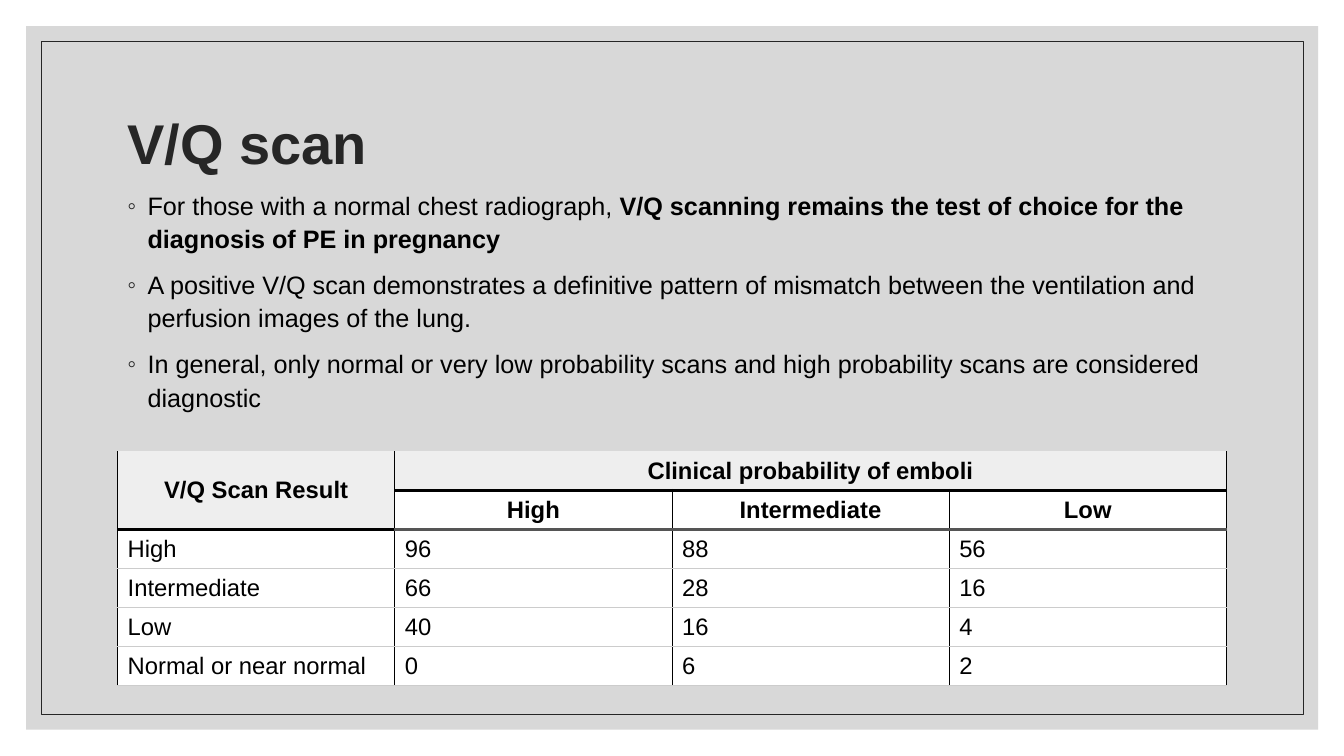
from lxml import etree
from pptx import Presentation
from pptx.dml.color import RGBColor
from pptx.enum import shapes, text
from pptx.oxml.ns import qn
from pptx.util import Pt

INK, BLACK, WHITE = "262626", "000000", "FFFFFF"
HEADER, GRID, RULE = "EEEEEE", "CCCCCC", "555555"
LEFT, WIDTH = 84, 792


def add_run(p, words, size, color=BLACK, bold=False):
    r = p.add_run()
    r.text = words
    for name, value in {"name": "Arial", "size": Pt(size), "bold": bold}.items():
        setattr(r.font, name, value)
    r.font.color.rgb = RGBColor.from_string(color)


def set_border(cell, position, side, color, width):
    """Draw one cell edge; position keeps the edges in schema order before the fill."""
    ln = etree.Element(qn(f"a:ln{side}"), w=str(Pt(width)))
    fill = etree.SubElement(ln, qn("a:solidFill"))
    etree.SubElement(fill, qn("a:srgbClr"), val=color)
    cell._tc.get_or_add_tcPr().insert(position, ln)


prs = Presentation()
prs.slide_width, prs.slide_height = Pt(960), Pt(540)
s = prs.slides.add_slide(prs.slide_layouts[5])
title = s.shapes.title

# Frame behind the content
panel, outline = [
    s.shapes.add_shape(shapes.MSO_SHAPE.RECTANGLE, *map(Pt, box))
    for box in ((18.6, 18.6, 923, 502.6), (29.4, 29.4, 901.5, 481))
]
panel.fill.solid()
panel.fill.fore_color.rgb = RGBColor.from_string("BFBFBF")
panel_color = panel.fill._xPr.find(".//" + qn("a:srgbClr"))
etree.SubElement(panel_color, qn("a:alpha"), val="60000")
panel.line.fill.background()
outline.fill.background()
outline.line.color.rgb = RGBColor.from_string(INK)
outline.line.width = Pt(0.5)
for sp in (panel, outline):
    sp.shadow.inherit = False
    title.element.addprevious(sp.element)

# Title
title.left, title.top, title.width, title.height = map(Pt, (LEFT, 50.4, WIDTH, 108))
tf = title.text_frame
tf.vertical_anchor = text.MSO_ANCHOR.MIDDLE
p = tf.paragraphs[0]
p.alignment, p.line_spacing = text.PP_ALIGN.LEFT, 0.9
add_run(p, "V/Q scan", 40, INK, True)

# Bullets: each is a list of (words, bold)
bullets = [
    [("For those with a normal chest radiograph, ", False),
     ("V/Q scanning remains the test of choice for the diagnosis of PE in pregnancy", True)],
    [("A positive V/Q scan demonstrates a definitive pattern of mismatch between "
      "the ventilation and perfusion images of the lung.", False)],
    [("In general, only normal or very low probability scans and high probability "
      "scans are considered diagnostic", False)],
]
tf = s.shapes.add_textbox(Pt(LEFT), Pt(130.3), Pt(WIDTH), Pt(338.4)).text_frame
tf.word_wrap = True
for i, runs in enumerate(bullets):
    p = tf.add_paragraph() if i else tf.paragraphs[0]
    p.line_spacing, p.space_before = 1.1, Pt(9)
    pPr = p._p.get_or_add_pPr()
    pPr.set("marL", str(Pt(14.4)))
    pPr.set("indent", str(-Pt(14.4)))
    bullet_color = etree.SubElement(pPr, qn("a:buClr"))
    etree.SubElement(bullet_color, qn("a:srgbClr"), val=INK)
    etree.SubElement(pPr, qn("a:buFont"), typeface="Arial")
    etree.SubElement(pPr, qn("a:buChar"), char="◦")
    for words, bold in runs:
        add_run(p, words, 18, bold=bold)

# Table
rows = [
    ["V/Q Scan Result", "Clinical probability of emboli", "", ""],
    ["", "High", "Intermediate", "Low"],
    ["High", "96", "88", "56"],
    ["Intermediate", "66", "28", "16"],
    ["Low", "40", "16", "4"],
    ["Normal or near normal", "0", "6", "2"],
]
frame = s.shapes.add_table(6, 4, Pt(LEFT), Pt(322.4), Pt(WIDTH), Pt(167.1))
table = frame.table
table.first_row = table.horz_banding = False
NO_STYLE = "{2D5ABB26-0587-4C30-8999-92F81FD0307C}"
table._tbl.tblPr.find(qn("a:tableStyleId")).text = NO_STYLE
table.cell(0, 0).merge(table.cell(1, 0))
table.cell(0, 1).merge(table.cell(0, 3))

for i, row in enumerate(rows):
    for j, words in enumerate(row):
        cell = table.cell(i, j)
        is_header = i < 2
        cell.vertical_anchor = text.MSO_ANCHOR.MIDDLE
        cell.fill.solid()
        shaded = i == 0 or (i == 1 and j == 0)
        cell.fill.fore_color.rgb = RGBColor.from_string(HEADER if shaded else WHITE)
        if words:
            p = cell.text_frame.paragraphs[0]
            p.alignment = text.PP_ALIGN.CENTER if is_header else text.PP_ALIGN.LEFT
            add_run(p, words, 17, bold=is_header)

        under_header = (RULE if j else BLACK, 2.25)
        below = {0: (BLACK, 2.25), 1: under_header}
        edges = {"L": (BLACK, 0.75), "R": (BLACK, 0.75)}
        if i and (i, j) != (1, 0):
            edges["T"] = below.get(i - 1, (GRID, 0.75))
        edges["B"] = below.get(i, (GRID, 0.75))
        for position, (side, (color, width)) in enumerate(edges.items()):
            set_border(cell, position, side, color, width)

prs.save("out.pptx")
